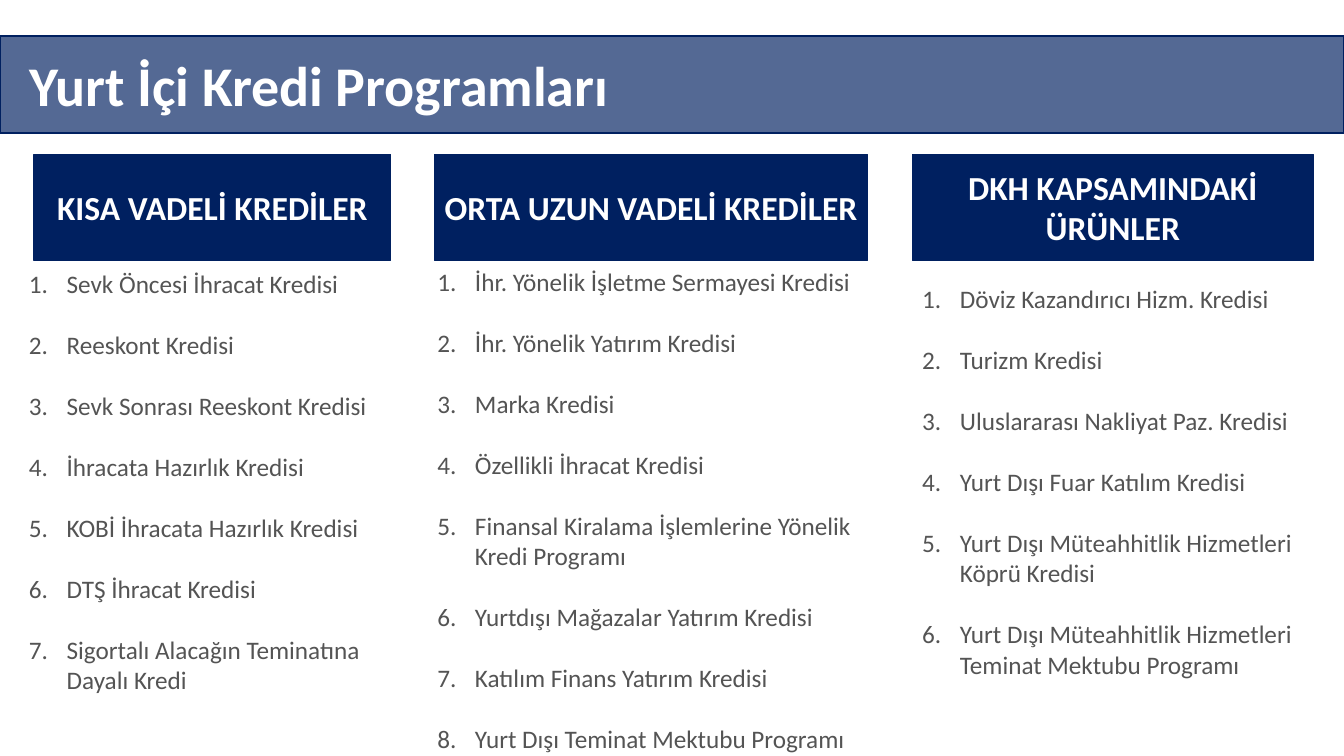
import dataclasses

import lxml.etree
import pptx
import pptx.dml.color
import pptx.enum.shapes
import pptx.enum.text
import pptx.oxml.ns
import pptx.shapes.autoshape
import pptx.slide
import pptx.text.text
import pptx.util

Cm = pptx.util.Cm
Pt = pptx.util.Pt
ALIGN = pptx.enum.text.PP_ALIGN
ANCHOR = pptx.enum.text.MSO_ANCHOR
qn = pptx.oxml.ns.qn

NAVY = "002060"
WHITE = "FFFFFF"
GREY = "545454"
FONT = "Calibri"
SLIDE_WIDTH = 33.87
HEADING_TOP, HEADING_HEIGHT = 3.89, 2.67
NUMBER_INDENT = 0.95


@dataclasses.dataclass(frozen=True)
class Box:
    left: float
    top: float
    width: float
    height: float


@dataclasses.dataclass(frozen=True)
class LoanGroup:
    heading: str
    left: float
    width: float
    list_index: int
    list_box: Box
    loans: tuple[str, ...]


GROUPS = (
    LoanGroup("KISA VADELİ KREDİLER", 0.86, 8.99, 1, Box(0.48, 6.63, 9.37, 11.02), (
        "Sevk Öncesi İhracat Kredisi",
        "Reeskont Kredisi",
        "Sevk Sonrası Reeskont Kredisi",
        "İhracata Hazırlık Kredisi",
        "KOBİ İhracata Hazırlık Kredisi",
        "DTŞ İhracat Kredisi",
        "Sigortalı Alacağın Teminatına Dayalı Kredi",
    )),
    LoanGroup("ORTA UZUN VADELİ KREDİLER", 10.95, 10.92, 2, Box(10.77, 6.58, 11.28, 12.4), (
        "İhr. Yönelik İşletme Sermayesi Kredisi",
        "İhr. Yönelik Yatırım Kredisi",
        "Marka Kredisi",
        "Özellikli İhracat Kredisi",
        "Finansal Kiralama İşlemlerine Yönelik Kredi Programı",
        "Yurtdışı Mağazalar Yatırım Kredisi",
        "Katılım Finans Yatırım Kredisi",
        "Yurt Dışı Teminat Mektubu Programı",
    )),
    LoanGroup("DKH KAPSAMINDAKİ ÜRÜNLER", 22.99, 10.11, 3, Box(22.99, 7.01, 10.11, 12), (
        "Döviz Kazandırıcı Hizm. Kredisi",
        "Turizm Kredisi",
        "Uluslararası Nakliyat Paz. Kredisi",
        "Yurt Dışı Fuar Katılım Kredisi",
        "Yurt Dışı Müteahhitlik Hizmetleri Köprü Kredisi",
        "Yurt Dışı Müteahhitlik Hizmetleri Teminat Mektubu Programı",
    )),
)


def colour(hex_value: str) -> pptx.dml.color.RGBColor:
    return pptx.dml.color.RGBColor.from_string(hex_value)


def place(shape: pptx.shapes.autoshape.Shape, box: Box) -> None:
    shape.left, shape.top = Cm(box.left), Cm(box.top)
    shape.width, shape.height = Cm(box.width), Cm(box.height)


def paint(shape: pptx.shapes.autoshape.Shape) -> None:
    shape.fill.solid()
    shape.fill.fore_color.rgb = colour(NAVY)
    shape.line.color.rgb = colour(NAVY)
    shape.line.width = Pt(1)


def set_frame(shape: pptx.shapes.autoshape.Shape, anchor: ANCHOR, side_margin: float) -> None:
    frame = shape.text_frame
    frame.word_wrap = True
    frame.auto_size = pptx.enum.text.MSO_AUTO_SIZE.NONE
    frame.vertical_anchor = anchor
    frame.margin_left = frame.margin_right = Cm(side_margin)
    frame.margin_top = frame.margin_bottom = Cm(0.13)


def write(paragraph: pptx.text.text._Paragraph, text: str, size: float,
          hex_value: str, bold: bool, alignment: ALIGN) -> None:
    paragraph.alignment = alignment
    run = paragraph.add_run()
    run.text = text
    run.font.name = FONT
    run.font.size = Pt(size)
    run.font.bold = bold
    run.font.color.rgb = colour(hex_value)


def number(paragraph: pptx.text.text._Paragraph) -> None:
    properties = paragraph._p.get_or_add_pPr()
    properties.set("marL", str(Cm(NUMBER_INDENT)))
    properties.set("indent", str(-Cm(NUMBER_INDENT)))
    lxml.etree.SubElement(properties, qn("a:buFont"), typeface=FONT)
    lxml.etree.SubElement(properties, qn("a:buAutoNum"), type="arabicPeriod")


def draw_title(slide: pptx.slide.Slide) -> None:
    title = slide.shapes.title
    place(title, Box(0, 0.91, SLIDE_WIDTH, 2.44))
    paint(title)
    navy_fill = title.element.spPr.find(qn("a:solidFill"))[0]
    lxml.etree.SubElement(navy_fill, qn("a:alpha"), val="67000")
    set_frame(title, ANCHOR.MIDDLE, 0.74)
    write(title.text_frame.paragraphs[0], "Yurt İçi Kredi Programları", 40, WHITE, True, ALIGN.LEFT)


def draw_heading(slide: pptx.slide.Slide, group: LoanGroup) -> None:
    heading = slide.shapes.add_shape(
        pptx.enum.shapes.MSO_SHAPE.RECTANGLE,
        Cm(group.left), Cm(HEADING_TOP), Cm(group.width), Cm(HEADING_HEIGHT))
    heading.shadow.inherit = False
    paint(heading)
    set_frame(heading, ANCHOR.MIDDLE, 0.2)
    write(heading.text_frame.paragraphs[0], group.heading, 24, WHITE, True, ALIGN.CENTER)


def draw_loans(slide: pptx.slide.Slide, group: LoanGroup) -> None:
    loans = slide.placeholders[group.list_index]
    place(loans, group.list_box)
    set_frame(loans, ANCHOR.TOP, 0.25)
    for position, loan in enumerate(group.loans):
        paragraph = loans.text_frame.add_paragraph() if position else loans.text_frame.paragraphs[0]
        number(paragraph)
        paragraph.line_spacing = 1.0
        paragraph.space_before = Pt(22 if position else 0)
        paragraph.space_after = Pt(0)
        write(paragraph, loan, 18, GREY, False, ALIGN.LEFT)


def main() -> None:
    presentation = pptx.Presentation()
    presentation.slide_width, presentation.slide_height = Cm(SLIDE_WIDTH), Cm(19.05)
    slide = presentation.slides.add_slide(presentation.slide_layouts.get_by_name("Comparison"))
    spare = slide.placeholders[4].element
    spare.getparent().remove(spare)
    draw_title(slide)
    for group in GROUPS:
        draw_loans(slide, group)
        draw_heading(slide, group)
    presentation.save("out.pptx")


if __name__ == "__main__":
    main()
